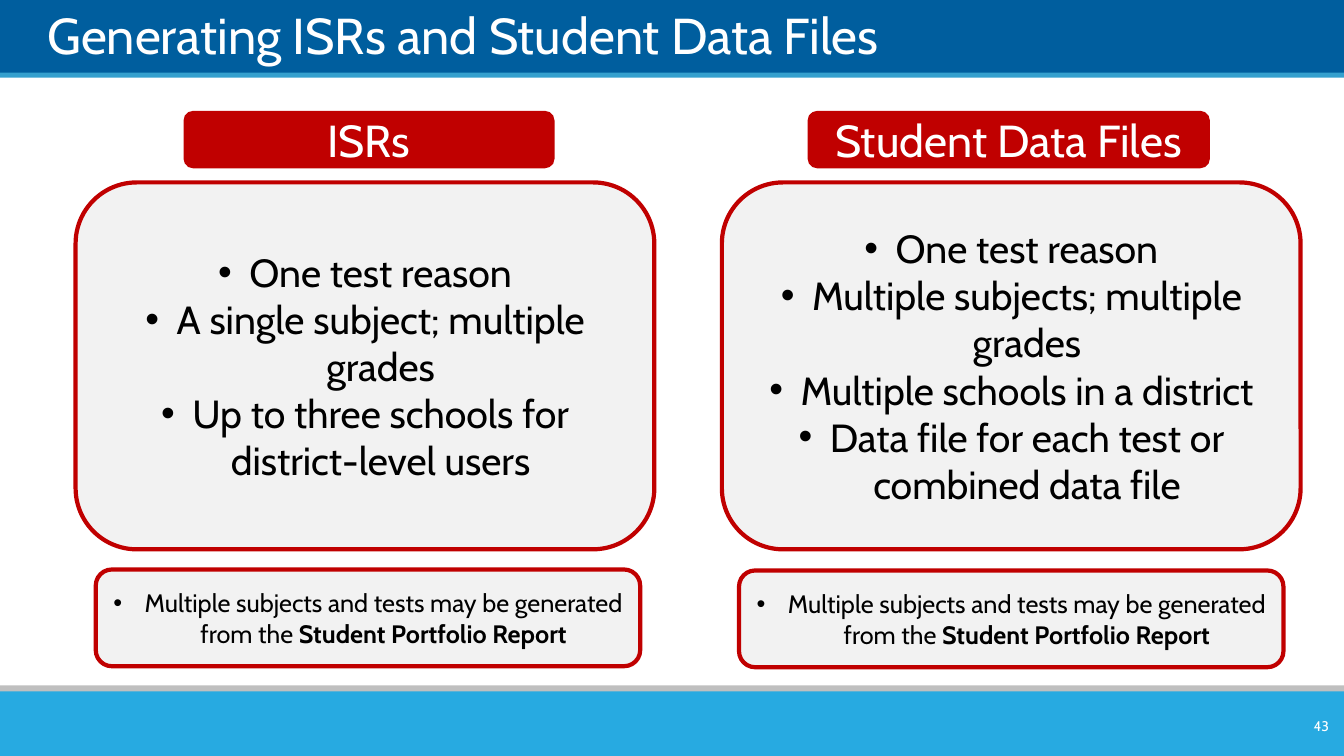
import pptx
import pptx.dml.color
import pptx.enum.shapes
import pptx.enum.text
import pptx.util
from dataclasses import dataclass
from lxml import etree

Inches = pptx.util.Inches
Align = pptx.enum.text.PP_ALIGN
Anchor = pptx.enum.text.MSO_ANCHOR
Preset = pptx.enum.shapes.MSO_SHAPE


@dataclass(frozen=True)
class Theme:
    font: str = "Cabin"
    navy: str = "005E9E"
    blue: str = "35A0CE"
    sky: str = "27AAE1"
    silver: str = "BFBFBF"
    red: str = "C00000"
    pale: str = "F2F2F2"
    white: str = "FFFFFF"
    black: str = "000000"
    title: int = 36
    heading: int = 32
    body: int = 28
    note: int = 18
    number: int = 10
    border: int = 3
    indent: float = 0.31


THEME = Theme()
NOTE = [("Multiple subjects and tests may be generated from the ", False),
        ("Student Portfolio Report", True)]


def rgb(color):
    return pptx.dml.color.RGBColor.from_string(color)


def add_bullet(para):
    properties = para._p.get_or_add_pPr()
    properties.set("marL", str(Inches(THEME.indent)))
    properties.set("indent", str(-Inches(THEME.indent)))
    namespace = pptx.oxml.ns.qn("a:buFont")
    etree.SubElement(properties, namespace, typeface="Arial")
    etree.SubElement(properties, pptx.oxml.ns.qn("a:buChar"), char="•")


def write_text(shape, paragraphs, size, color, align=Align.CENTER,
               anchor=Anchor.MIDDLE, bullets=False):
    frame = shape.text_frame
    frame.word_wrap = True
    frame.vertical_anchor = anchor
    for index, spans in enumerate(paragraphs):
        para = frame.add_paragraph() if index else frame.paragraphs[0]
        para.alignment = align
        if bullets:
            add_bullet(para)
        for text, bold in spans:
            span = para.add_run()
            span.text = text
            span.font.name = THEME.font
            span.font.size = pptx.util.Pt(size)
            span.font.bold = bold
            span.font.color.rgb = rgb(color)


def plain(*lines):
    return [[(line, False)] for line in lines]


def add_block(page, place, fill, preset=Preset.ROUNDED_RECTANGLE, border=None):
    shape = page.shapes.add_shape(preset, *map(Inches, place))
    shape.shadow.inherit = False
    shape.fill.solid()
    shape.fill.fore_color.rgb = rgb(fill)
    if border:
        shape.line.color.rgb = rgb(border)
        shape.line.width = pptx.util.Pt(THEME.border)
    else:
        shape.line.fill.background()
    return shape


def add_label(page, place, text, size, align, anchor, margin):
    box = page.shapes.add_textbox(*map(Inches, place))
    frame = box.text_frame
    frame.margin_left = frame.margin_right = Inches(margin)
    frame.margin_top = frame.margin_bottom = Inches(margin / 2)
    write_text(box, plain(text), size, THEME.white, align, anchor)


def add_column(page, heading, points, panel_left, heading_left, heading_width,
               note_left, note_top):
    panel = add_block(page, (panel_left, 1.81, 5.74, 3.64), THEME.pale,
                      border=THEME.red)
    write_text(panel, plain(*points), THEME.body, THEME.black, bullets=True)
    banner = add_block(page, (heading_left, 1.1, heading_width, 0.57), THEME.red)
    write_text(banner, plain(heading), THEME.heading, THEME.white)
    note = add_block(page, (note_left, note_top, 5.4, 0.96), THEME.pale,
                     border=THEME.red)
    write_text(note, [NOTE], THEME.note, THEME.black, bullets=True)


def main():
    deck = pptx.Presentation()
    deck.slide_width, deck.slide_height = Inches(13.33), Inches(7.5)
    page = deck.slides.add_slide(deck.slide_layouts[6])

    for top, height, color in [(-0.01, 0.75, THEME.navy), (0.72, 0.05, THEME.blue),
                               (6.8, 0.14, THEME.silver), (6.86, 0.64, THEME.sky)]:
        add_block(page, (0, top, 13.33, height), color, Preset.RECTANGLE)

    add_label(page, (0.47, 0.07, 12.05, 0.57), "Generating ISRs and Student Data Files",
              THEME.title, Align.LEFT, Anchor.BOTTOM, 0)
    add_column(page, "ISRs",
               ["One test reason", "A single subject; multiple grades",
                "Up to three schools for district-level users"],
               0.75, 1.82, 3.68, 0.95, 5.65)
    add_column(page, "Student Data Files",
               ["One test reason", "Multiple subjects; multiple grades",
                "Multiple schools in a district",
                "Data file for each test or combined data file"],
               7.16, 8.01, 3.99, 7.33, 5.66)
    add_label(page, (12.51, 7.05, 0.77, 0.3), "43",
              THEME.number, Align.RIGHT, Anchor.MIDDLE, 0.1)

    deck.save("out.pptx")


if __name__ == "__main__":
    main()
